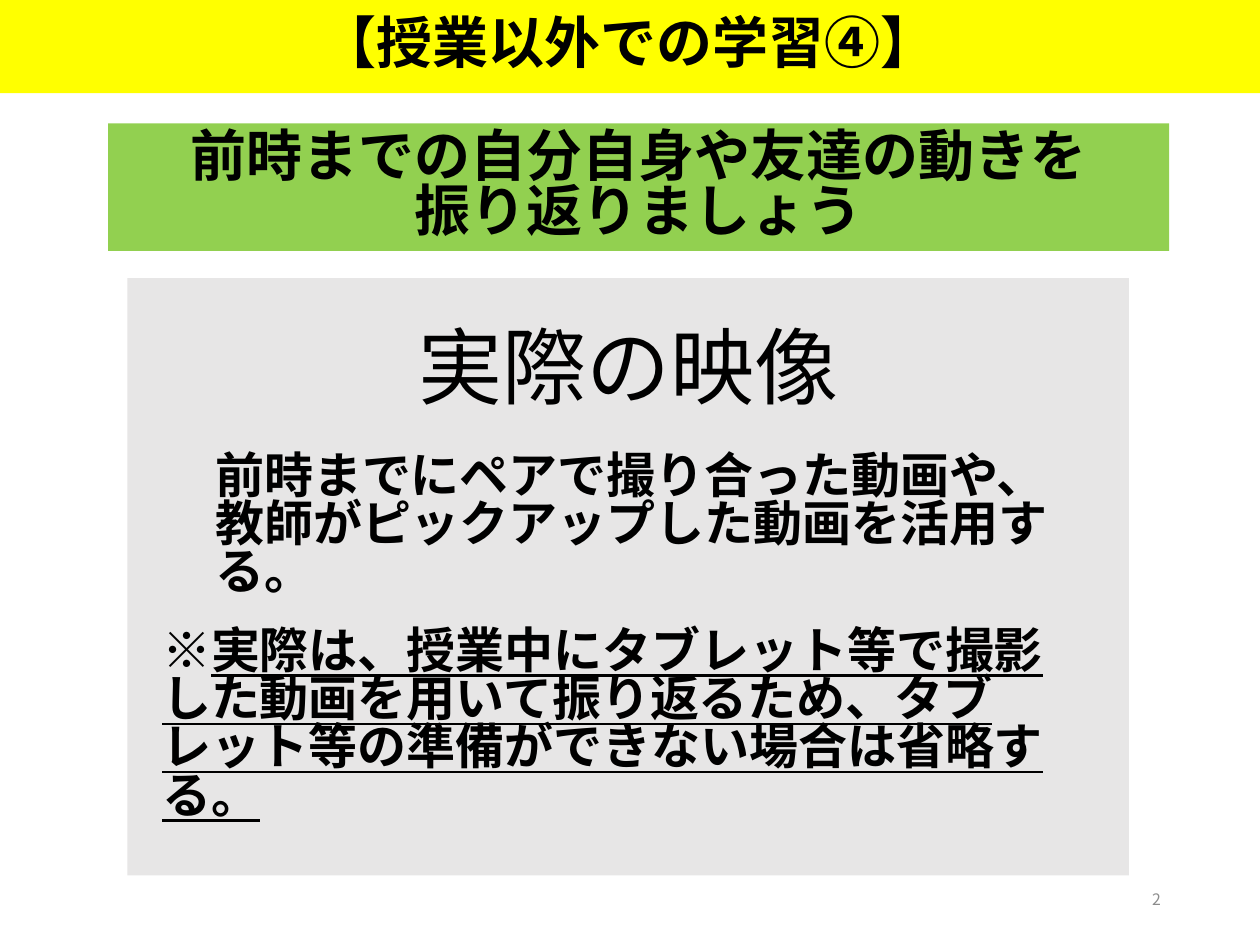
import pptx
import pptx.dml.color
import pptx.enum.shapes
import pptx.enum.text
import pptx.oxml.ns
import pptx.util
from dataclasses import dataclass
from lxml import etree

Cm = pptx.util.Cm
Align = pptx.enum.text.PP_ALIGN
Anchor = pptx.enum.text.MSO_ANCHOR


@dataclass(frozen=True)
class Theme:
    font: str = "Noto Sans CJK JP"
    ink: str = "000000"
    muted: str = "8C8C8C"
    title_fill: str = "FFFF00"
    heading_fill: str = "92D050"
    panel_fill: str = "E7E6E6"
    heading_size: int = 32
    panel_size: int = 48
    body_size: int = 28
    number_size: int = 9
    line_spacing: float = 0.82


theme = Theme()


def write(box, lines, size, align, bold=True, color=theme.ink, anchor=Anchor.MIDDLE):
    """Fill a box with paragraphs; each line is a list of (text, underlined)."""
    frame = box.text_frame
    frame.word_wrap = True
    frame.auto_size = pptx.enum.text.MSO_AUTO_SIZE.NONE
    frame.vertical_anchor = anchor
    for index, line in enumerate(lines):
        para = frame.add_paragraph() if index else frame.paragraphs[0]
        para.alignment = align
        para.line_spacing = theme.line_spacing
        for text, underlined in line:
            span = para.add_run()
            span.text = text
            if underlined:
                span.font.underline = True
        para.font.size = pptx.util.Pt(size)
        para.font.bold = bold
        para.font.color.rgb = pptx.dml.color.RGBColor.from_string(color)
        para.font.name = theme.font
        defaults = para._p.pPr.find(pptx.oxml.ns.qn("a:defRPr"))
        east_asian = etree.SubElement(defaults, pptx.oxml.ns.qn("a:ea"))
        east_asian.set("typeface", theme.font)


def paint(box, color):
    box.fill.solid()
    box.fill.fore_color.rgb = pptx.dml.color.RGBColor.from_string(color)
    box.line.fill.background()


deck = pptx.Presentation()
deck.slide_width, deck.slide_height = Cm(25.4), Cm(19.05)
page = deck.slides.add_slide(deck.slide_layouts[5])

# Title band
title = page.shapes.title
title.left, title.top, title.width, title.height = Cm(-0.05), Cm(0), Cm(25.45), Cm(1.88)
paint(title, theme.title_fill)
write(title, [[("【授業以外での学習④】", False)]], theme.heading_size, Align.CENTER)

# Heading and video panel
rectangle = pptx.enum.shapes.MSO_SHAPE.RECTANGLE
heading = page.shapes.add_shape(rectangle, Cm(2.18), Cm(2.49), Cm(21.39), Cm(2.57))
panel = page.shapes.add_shape(rectangle, Cm(2.57), Cm(5.61), Cm(20.19), Cm(12.04))
for box, color in ((heading, theme.heading_fill), (panel, theme.panel_fill)):
    box.shadow.inherit = False
    paint(box, color)

write(heading, [[("前時までの自分自身や友達の動きを", False)], [("振り返りましょう", False)]],
      theme.heading_size, Align.CENTER)
panel.text_frame.margin_top = Cm(1.1)
write(panel, [[("実際の映像", False)]], theme.panel_size, Align.CENTER,
      bold=False, anchor=Anchor.TOP)

# Explanations on the panel
usage = page.shapes.add_textbox(Cm(4.09), Cm(9.04), Cm(18.06), Cm(4))
write(usage, [[("前時までにペアで撮り合った動画や、教師がピックアップした動画を活用する。", False)]],
      theme.body_size, Align.LEFT, anchor=Anchor.TOP)

caution = page.shapes.add_textbox(Cm(3.02), Cm(12.57), Cm(19.13), Cm(5))
write(caution, [[("※", False),
                 ("実際は、授業中にタブレット等で撮影した動画を用いて振り返るため、"
                  "タブレット等の準備ができない場合は省略する。", True)]],
      theme.body_size, Align.LEFT, anchor=Anchor.TOP)

# Page number
number = page.shapes.add_textbox(Cm(17.93), Cm(17.65), Cm(5.72), Cm(1.02))
write(number, [[("2", False)]], theme.number_size, Align.RIGHT, bold=False, color=theme.muted)

deck.save("out.pptx")
